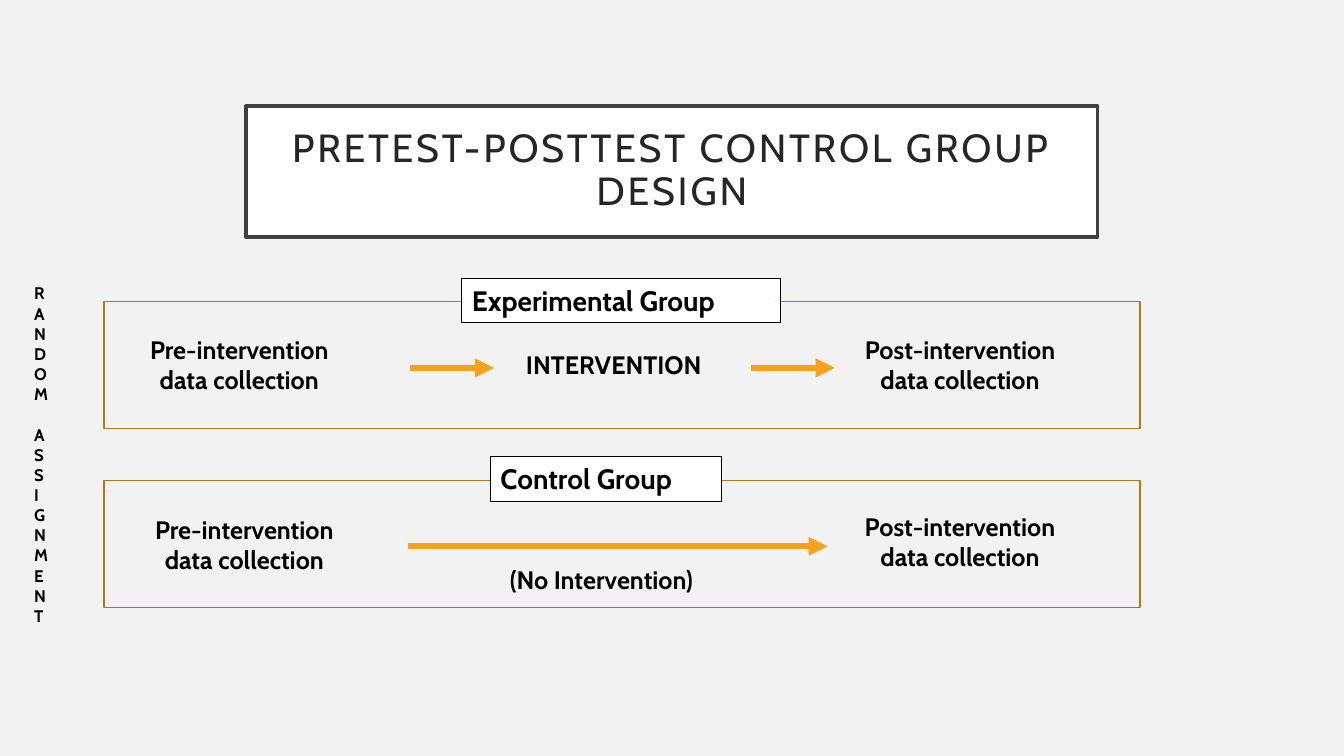
from lxml.etree import SubElement
from pptx import Presentation
from pptx.dml.color import RGBColor
from pptx.enum.shapes import MSO_CONNECTOR, MSO_SHAPE
from pptx.enum.text import MSO_ANCHOR, MSO_AUTO_SIZE, PP_ALIGN
from pptx.oxml.ns import qn
from pptx.util import Pt

PALE_GREY = RGBColor(0xF2, 0xF2, 0xF2)
WHITE = RGBColor(0xFF, 0xFF, 0xFF)
BLACK = RGBColor(0x00, 0x00, 0x00)
DARK_GREY = RGBColor(0x40, 0x40, 0x40)
TITLE_GREY = RGBColor(0x26, 0x26, 0x26)
BROWN = RGBColor(0xB6, 0x78, 0x15)
ORANGE = RGBColor(0xF6, 0xA2, 0x1D)

FONT = "Cabin"
LETTER_HEIGHT = 14.4


def set_font(para, size, color=BLACK, bold=True):
    """Set the font of a whole paragraph."""
    para.font.name = FONT
    para.font.size = Pt(size)
    para.font.bold = bold
    para.font.color.rgb = color


def add_box(shapes, left, top, width, height, line_color, line_width, fill=None):
    """Add an outlined rectangle, filled when a fill colour is given."""
    box = shapes.add_shape(
        MSO_SHAPE.RECTANGLE, Pt(left), Pt(top), Pt(width), Pt(height)
    )
    box.shadow.inherit = False
    box.line.color.rgb = line_color
    box.line.width = Pt(line_width)
    if fill is None:
        box.fill.background()
    else:
        box.fill.solid()
        box.fill.fore_color.rgb = fill
    return box


def write_lines(box, lines, size, wrap=False):
    """Write left-aligned bold lines, one paragraph each."""
    frame = box.text_frame
    frame.word_wrap = wrap
    frame.auto_size = MSO_AUTO_SIZE.SHAPE_TO_FIT_TEXT
    frame.vertical_anchor = MSO_ANCHOR.TOP
    frame.text = "\n".join(lines)
    for para in frame.paragraphs:
        para.alignment = PP_ALIGN.LEFT
        set_font(para, size)
    return frame


def add_text(shapes, left, top, width, height, lines, size=18, wrap=False):
    """Add a text box and return its text frame."""
    box = shapes.add_textbox(Pt(left), Pt(top), Pt(width), Pt(height))
    return write_lines(box, lines, size, wrap)


def add_collection(shapes, left, top, width, stage):
    """Add a data collection step with its second line centred."""
    lines = [f"{stage}-intervention", "data collection"]
    frame = add_text(shapes, left, top, width, 50.9, lines)
    frame.paragraphs[1].alignment = PP_ALIGN.CENTER


def add_arrow(shapes, start, end, y):
    """Add a thick horizontal arrow pointing right."""
    arrow = shapes.add_connector(
        MSO_CONNECTOR.STRAIGHT, Pt(start), Pt(y), Pt(end), Pt(y)
    )
    arrow.line.color.rgb = ORANGE
    arrow.line.width = Pt(4.5)
    SubElement(arrow.line._get_or_add_ln(), qn("a:tailEnd"), type="triangle")
    SubElement(arrow._element.spPr, qn("a:effectLst"))


def add_group_frame(shapes, top, label, label_left, label_width):
    """Add a study group's frame and the label on its top edge."""
    add_box(shapes, 74.2, top, 740.2, 90.7, BROWN, 1)
    tag = add_box(
        shapes, label_left, top - 17, label_width, 31.5, BLACK, 0.75, WHITE
    )
    write_lines(tag, [label], 20)


def add_title(page, text):
    """Add the framed slide title with wide letter spacing."""
    box = add_box(page.shapes, 175.7, 75.6, 608.4, 93.6, DARK_GREY, 2.5, WHITE)
    frame = box.text_frame
    frame.word_wrap = True
    frame.vertical_anchor = MSO_ANCHOR.MIDDLE
    frame.margin_left = frame.margin_right = Pt(14.4)
    frame.margin_top = frame.margin_bottom = Pt(14.4)
    frame.text = text
    para = frame.paragraphs[0]
    para.alignment = PP_ALIGN.CENTER
    para.line_spacing = 0.9
    set_font(para, 28, TITLE_GREY, False)
    para.runs[0]._r.get_or_add_rPr().set("spc", "200")


def add_experimental_group(page):
    """Add the group that receives the intervention."""
    shapes = page.shapes.add_group_shape().shapes
    add_group_frame(shapes, 215.6, "Experimental Group", 330, 227.5)
    add_collection(shapes, 100.1, 235.4, 177.1, "Pre")
    add_collection(shapes, 610.6, 235.4, 185.8, "Post")
    add_text(shapes, 368.6, 246.2, 160.6, 29.1, ["INTERVENTION"])
    for start in (293, 536.4):
        add_arrow(shapes, start, start + 59.8, 262.8)


def add_control_group(page):
    """Add the group that receives no intervention."""
    shapes = page.shapes.add_group_shape().shapes
    add_group_frame(shapes, 343.4, "Control Group", 350.4, 164.9)
    add_collection(shapes, 103.7, 363.6, 175.7, "Pre")
    add_collection(shapes, 610.6, 361.4, 184.3, "Post")
    add_arrow(shapes, 291.2, 591.1, 390.2)
    add_text(shapes, 357.1, 399.6, 179.3, 29.1, ["(No Intervention)"])


def add_random_assignment(page):
    """Spell the assignment method downwards with a gap between words."""
    first, second = "RANDOM", "ASSIGNMENT"
    frame = add_text(
        page.shapes, 17.3, 198.7, 43.2, 254.2, first + second, 12, True
    )
    frame.paragraphs[len(first)].space_before = Pt(LETTER_HEIGHT)


def main():
    """Build the slide and save the deck."""
    deck = Presentation()
    deck.slide_width = Pt(960)
    deck.slide_height = Pt(540)
    page = deck.slides.add_slide(deck.slide_layouts[6])
    page.background.fill.solid()
    page.background.fill.fore_color.rgb = PALE_GREY
    add_title(page, "PRETEST-POSTTEST CONTROL GROUP DESIGN")
    add_experimental_group(page)
    add_control_group(page)
    add_random_assignment(page)
    deck.save("out.pptx")


if __name__ == "__main__":
    main()
